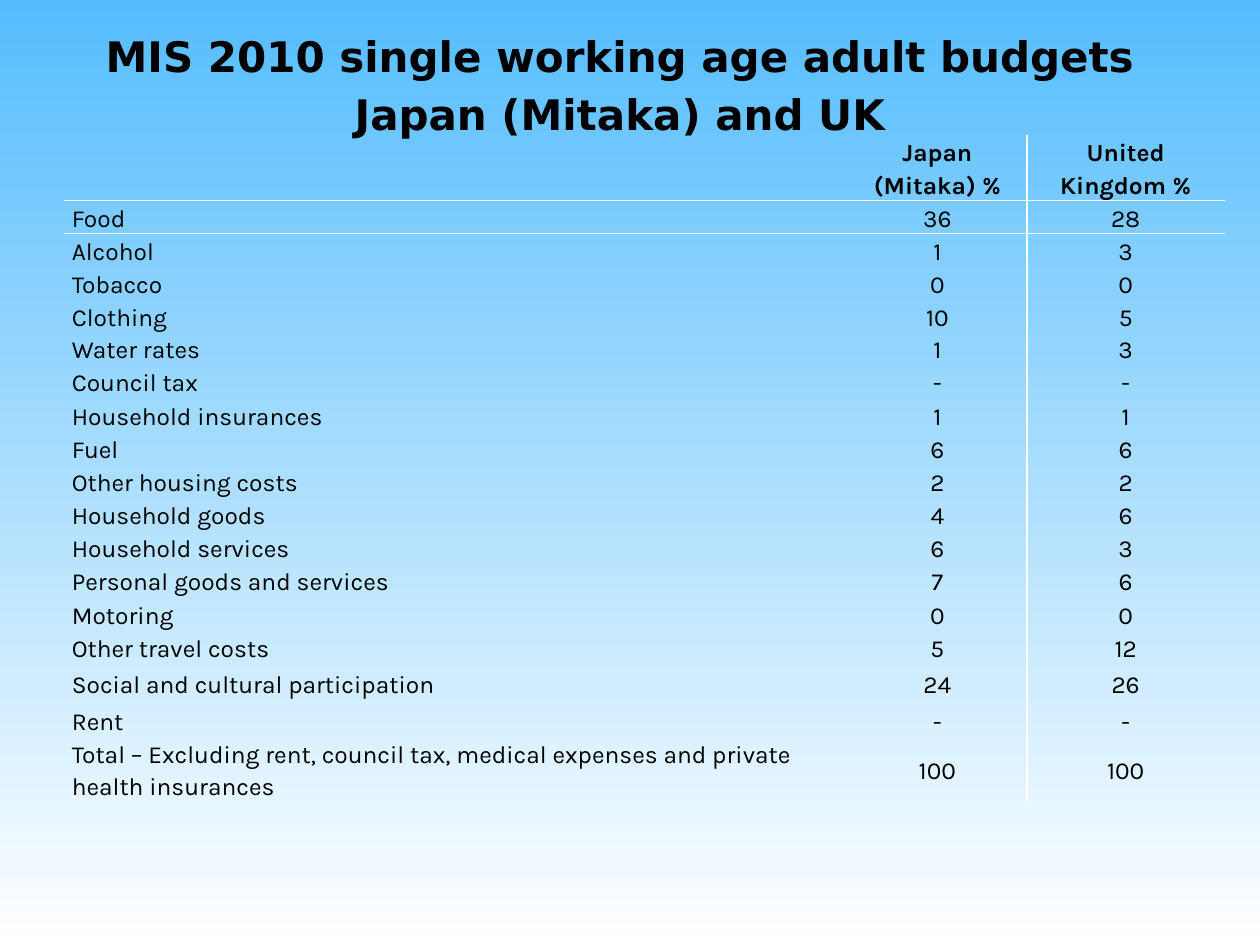
"""Build the slide of single adult budget shares in Japan and the UK."""
from dataclasses import dataclass

from lxml import etree
from pptx import Presentation
from pptx.dml.color import RGBColor
from pptx.enum.text import MSO_ANCHOR, MSO_AUTO_SIZE, PP_ALIGN
from pptx.oxml.ns import qn
from pptx.util import Inches, Pt

CENTER, LEFT = PP_ALIGN.CENTER, PP_ALIGN.LEFT
MIDDLE, TOP = MSO_ANCHOR.MIDDLE, MSO_ANCHOR.TOP
NO_FIT = MSO_AUTO_SIZE.NONE
NO_STYLE = "{2D5ABB26-0587-4C30-8999-92F81FD0307C}"


@dataclass(frozen=True)
class Theme:
    sky: str = "55BDFD"
    white: str = "FFFFFF"
    ink: str = "000000"
    head_font: str = "DejaVu Sans"
    body_font: str = "Karla"
    head_size: int = 24
    body_size: int = 14
    rule: int = 1
    spacing: float = 1.15


theme = Theme()


def style(para, font, size, bold, align):
    para.alignment = align
    para.line_spacing = theme.spacing
    para.font.name = font
    para.font.size = Pt(size)
    para.font.bold = bold
    para.font.color.rgb = RGBColor.from_string(theme.ink)


def border(cell, side):
    props = cell._tc.get_or_add_tcPr()
    line = etree.SubElement(props, qn(f"a:ln{side}"), w=str(Pt(theme.rule)))
    fill = etree.SubElement(line, qn("a:solidFill"))
    etree.SubElement(fill, qn("a:srgbClr"), val=theme.white)


rows = [
    ("", "Japan (Mitaka) %", "United Kingdom %"),
    ("Food", "36", "28"),
    ("Alcohol", "1", "3"),
    ("Tobacco", "0", "0"),
    ("Clothing", "10", "5"),
    ("Water rates", "1", "3"),
    ("Council tax", "-", "-"),
    ("Household insurances", "1", "1"),
    ("Fuel", "6", "6"),
    ("Other housing costs", "2", "2"),
    ("Household goods", "4", "6"),
    ("Household services", "6", "3"),
    ("Personal goods and services", "7", "6"),
    ("Motoring", "0", "0"),
    ("Other travel costs", "5", "12"),
    ("Social and cultural participation", "24", "26"),
    ("Rent", "-", "-"),
    ("Total – Excluding rent, council tax, medical expenses and private "
     "health insurances", "100", "100"),
]
widths = (6.22, 1.42, 1.57)
last = len(rows) - 1
heights = [0.26] * len(rows)
for index, height in ((0, 0.44), (7, 0.27), (12, 0.27), (15, 0.32),
                      (16, 0.17), (last, 0.39)):
    heights[index] = height

deck = Presentation()
deck.slide_width, deck.slide_height = Inches(10), Inches(7.5)
slide = deck.slides.add_slide(deck.slide_layouts[5])

back = slide.background.fill
back.gradient()
back.gradient_angle = 270
for stop, color in zip(back.gradient_stops, (theme.sky, theme.white)):
    stop.color.rgb = RGBColor.from_string(color)

title = slide.shapes.title
title.left, title.top = Inches(0.43), Inches(0.21)
title.width, title.height = Inches(8.98), Inches(0.87)
frame = title.text_frame
frame.text = "MIS 2010 single working age adult budgets Japan (Mitaka) and UK"
frame.word_wrap = True
frame.auto_size = NO_FIT
frame.vertical_anchor = MIDDLE
style(frame.paragraphs[0], theme.head_font, theme.head_size, True, CENTER)

table = slide.shapes.add_table(
    len(rows), len(widths), Inches(0.51), Inches(1.07),
    Inches(sum(widths)), Inches(sum(heights))).table
table.first_row = table.horz_banding = False
table._tbl.tblPr.find(qn("a:tableStyleId")).text = NO_STYLE
for column, width in zip(table.columns, widths):
    column.width = Inches(width)

for r, row in enumerate(rows):
    table.rows[r].height = Inches(heights[r])
    for c, text in enumerate(row):
        cell = table.cell(r, c)
        cell.text = text
        cell.margin_left = cell.margin_right = Inches(0.06)
        cell.margin_top = cell.margin_bottom = 0
        cell.vertical_anchor = TOP if r == last and c == 0 else MIDDLE
        style(cell.text_frame.paragraphs[0], theme.body_font,
              theme.body_size, r == 0, CENTER if c else LEFT)
        for side, drawn in (("L", c == 2), ("R", c == 1),
                            ("T", r == 1), ("B", r == 0)):
            if drawn:
                border(cell, side)
        cell.fill.background()

deck.save("out.pptx")
